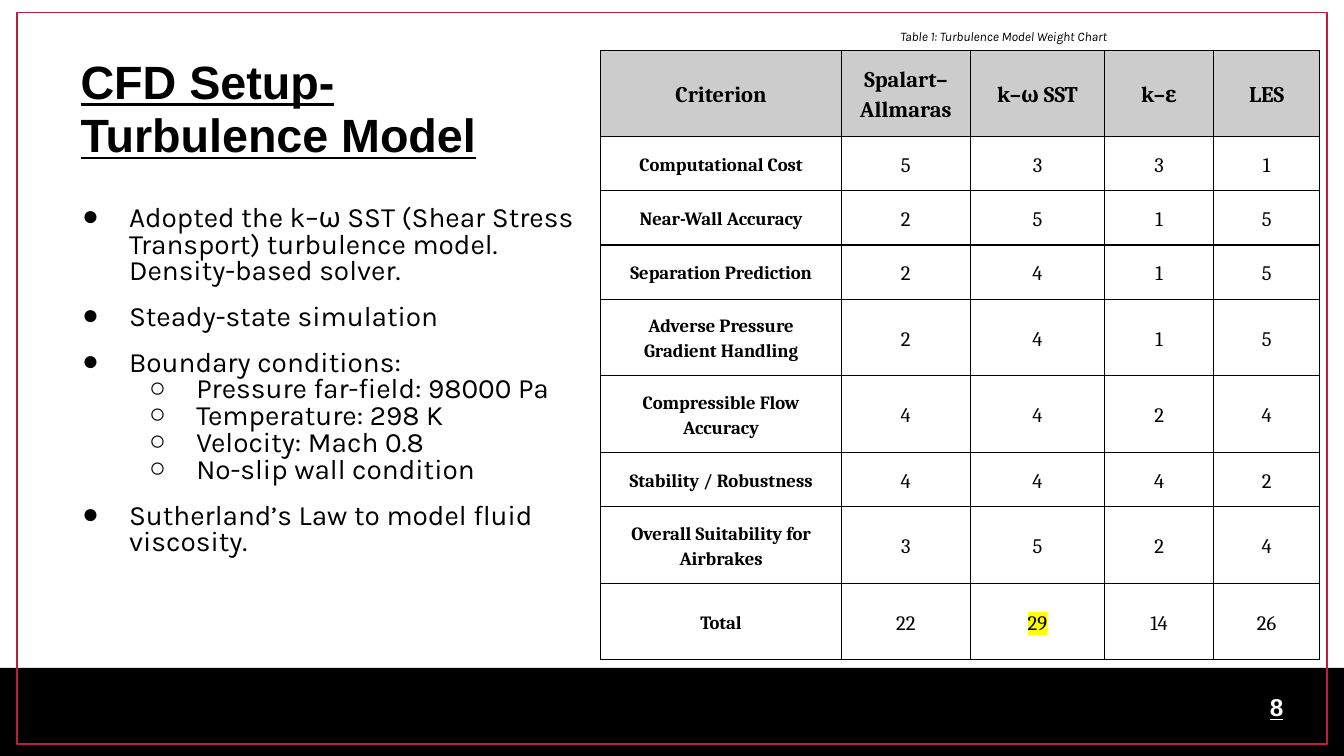
from dataclasses import dataclass

from lxml.etree import SubElement as Sub, Element
from pptx import Presentation
from pptx.dml.color import RGBColor as RGB
from pptx.enum.shapes import MSO_SHAPE as Shape
from pptx.enum.text import MSO_ANCHOR as Anchor, MSO_AUTO_SIZE as Fit, PP_ALIGN as Align
from pptx.oxml.ns import qn
from pptx.util import Inches, Pt

# Content
TITLE = ["CFD Setup-", "Turbulence Model"]
POINTS = [
    ("Adopted the k–ω SST (Shear Stress Transport) turbulence model. "
     "Density-based solver.", []),
    ("Steady-state simulation", []),
    ("Boundary conditions:", [
        "Pressure far-field: 98000 Pa",
        "Temperature: 298 K",
        "Velocity: Mach 0.8",
        "No-slip wall condition",
    ]),
    ("Sutherland’s Law to model fluid viscosity.", []),
]
CAPTION = "Table 1: Turbulence Model Weight Chart"
HEAD = ["Criterion", "Spalart–Allmaras", "k–ω SST", "k–ε", "LES"]
SCORES = [
    ("Computational Cost", 5, 3, 3, 1),
    ("Near-Wall Accuracy", 2, 5, 1, 5),
    ("Separation Prediction", 2, 4, 1, 5),
    ("Adverse Pressure Gradient Handling", 2, 4, 1, 5),
    ("Compressible Flow Accuracy", 4, 4, 2, 4),
    ("Stability / Robustness", 4, 4, 4, 2),
    ("Overall Suitability for Airbrakes", 3, 5, 2, 4),
    ("Total", 22, 29, 14, 26),
]
BEST = "29"
PAGE = "8"


@dataclass(frozen=True)
class Theme:
    ink: str = "000000"
    paper: str = "FFFFFF"
    frame: str = "BC1E3E"
    head: str = "CCCCCC"
    mark: str = "FFFF00"
    sans: str = "Arial"
    serif: str = "Cambria"
    body: str = "Karla"
    title_pt: int = 25
    list_pt: int = 15
    page_pt: int = 13
    head_pt: int = 12
    score_pt: int = 11
    name_pt: int = 10
    note_pt: int = 7
    line_pt: float = 0.75


T = Theme()

# Layout: a 16:9 slide
WIDE = 10
HIGH = WIDE * 9 / 16
FOOT = 4.97
EDGE = WIDE / 80
LEFT, TOP = 4.47, HIGH / 15
COLS = [1.79, 0.96, 1, 0.81, 0.79]
HEAD_ROW, ROW, TALL_ROW = 0.64, 0.4, 0.57
TALL = {"Adverse Pressure Gradient Handling", "Compressible Flow Accuracy",
        "Overall Suitability for Airbrakes", "Total"}
ROWS = [HEAD_ROW] + [TALL_ROW if row[0] in TALL else ROW for row in SCORES]
STEP, HANG = 0.5, 0.35


def style(par, face, size, color=T.ink, **flags):
    for run in par.runs:
        font = run.font
        font.name, font.size = face, Pt(size)
        font.color.rgb = RGB.from_string(color)
        for key, val in flags.items():
            setattr(font, key, val)


def place(shape, *box):
    shape.left, shape.top, shape.width, shape.height = map(Inches, box)


def pad(frame, x, y):
    frame.margin_left = frame.margin_right = Inches(x)
    frame.margin_top = frame.margin_bottom = Inches(y)


def write(frame, lines):
    frame.word_wrap, frame.auto_size = True, Fit.NONE
    frame.text = "\n".join(lines)
    return frame.paragraphs


def rect(slide, *box):
    shape = slide.shapes.add_shape(Shape.RECTANGLE, *map(Inches, box))
    shape.shadow.inherit = False
    return shape


def label(slide, text, box, y_pad, anchor=Anchor.TOP):
    frame = slide.shapes.add_textbox(*map(Inches, box)).text_frame
    pad(frame, 0.1, y_pad)
    frame.vertical_anchor = anchor
    return write(frame, [text])[0]


def bullet(par, level):
    par.level = level
    props = par._p.get_or_add_pPr()
    props.set("marL", str(Inches(STEP * (level + 1))))
    props.set("indent", str(-Inches(HANG)))
    Sub(Sub(props, qn("a:buClr")), qn("a:srgbClr"), val=T.ink)
    Sub(props, qn("a:buChar"), char="●○"[level])


def border(cell):
    props = cell._tc.get_or_add_tcPr()
    for i, side in enumerate("LRTB"):
        line = Element(qn(f"a:ln{side}"), w=str(Pt(T.line_pt)))
        Sub(Sub(line, qn("a:solidFill")), qn("a:srgbClr"), val=T.ink)
        props.insert(i, line)


def mark(run):
    glow = Element(qn("a:highlight"))
    Sub(glow, qn("a:srgbClr"), val=T.mark)
    run._r.rPr.find(qn("a:solidFill")).addnext(glow)


def fill_cell(cell, text, size, bold, head):
    pad(cell, 0.1, 0.1)
    cell.vertical_anchor = Anchor.MIDDLE
    cell.text = text
    par = cell.text_frame.paragraphs[0]
    par.alignment, par.line_spacing = Align.CENTER, 1.15
    style(par, T.serif, size, bold=bold)
    if head:
        cell.fill.solid()
        cell.fill.fore_color.rgb = RGB.from_string(T.head)
    else:
        cell.fill.background()
    border(cell)
    if text == BEST:
        mark(par.runs[0])


def main():
    deck = Presentation()
    deck.slide_width, deck.slide_height = Inches(WIDE), Inches(HIGH)
    slide = deck.slides.add_slide(deck.slide_layouts[1])
    title, body = slide.placeholders

    # Footer band, frame and page number
    band = rect(slide, 0, FOOT, WIDE, HIGH - FOOT)
    band.fill.solid()
    band.fill.fore_color.rgb = RGB.from_string(T.ink)
    band.line.fill.background()
    frame = rect(slide, EDGE, HIGH * 0.017, WIDE - 2 * EDGE, 5.44)
    frame.fill.background()
    frame.line.color.rgb = RGB.from_string(T.frame)
    frame.line.width = Pt(T.line_pt)
    page = label(slide, PAGE, (9.35, 5.12, 0.62, 0.28), 0.05, Anchor.MIDDLE)
    style(page, T.sans, T.page_pt, T.paper, bold=True, underline=True)

    # Title
    place(title, 0.5, TOP, 7.18, 0.58)
    pad(title.text_frame, 0.1, 0.05)
    title.text_frame.vertical_anchor = Anchor.TOP
    for par in write(title.text_frame, TITLE):
        par.alignment, par.line_spacing = Align.LEFT, 0.95
        style(par, T.sans, T.title_pt, bold=True, underline=True)

    # Bullet list
    place(body, 0.39, 1.49, 4.08, 3.61)
    pad(body.text_frame, 0.07, 0.04)
    items = [(text, lvl) for point, subs in POINTS
             for text, lvl in [(point, 0)] + [(sub, 1) for sub in subs]]
    pars = write(body.text_frame, [text for text, _ in items])
    for i, (par, (_, level)) in enumerate(zip(pars, items)):
        bullet(par, level)
        par.line_spacing = 0.8
        par.space_before = Pt(10 if i and not level else 0)
        style(par, T.body, T.list_pt)

    # Score table and caption
    grid = slide.shapes.add_table(len(ROWS), len(COLS), *map(
        Inches, (LEFT, TOP, sum(COLS), sum(ROWS)))).table
    for col, width in zip(grid.columns, COLS):
        col.width = Inches(width)
    for row, height in zip(grid.rows, ROWS):
        row.height = Inches(height)
    for r, row in enumerate([HEAD, *SCORES]):
        for c, value in enumerate(row):
            size = T.head_pt if r == 0 else T.name_pt if c == 0 else T.score_pt
            fill_cell(grid.cell(r, c), str(value), size, r == 0 or c == 0, r == 0)
    note = label(slide, CAPTION, (6.6, 0.11, 2.29, 0.32), 0.1)
    style(note, T.body, T.note_pt, italic=True)

    deck.save("out.pptx")


if __name__ == "__main__":
    main()
